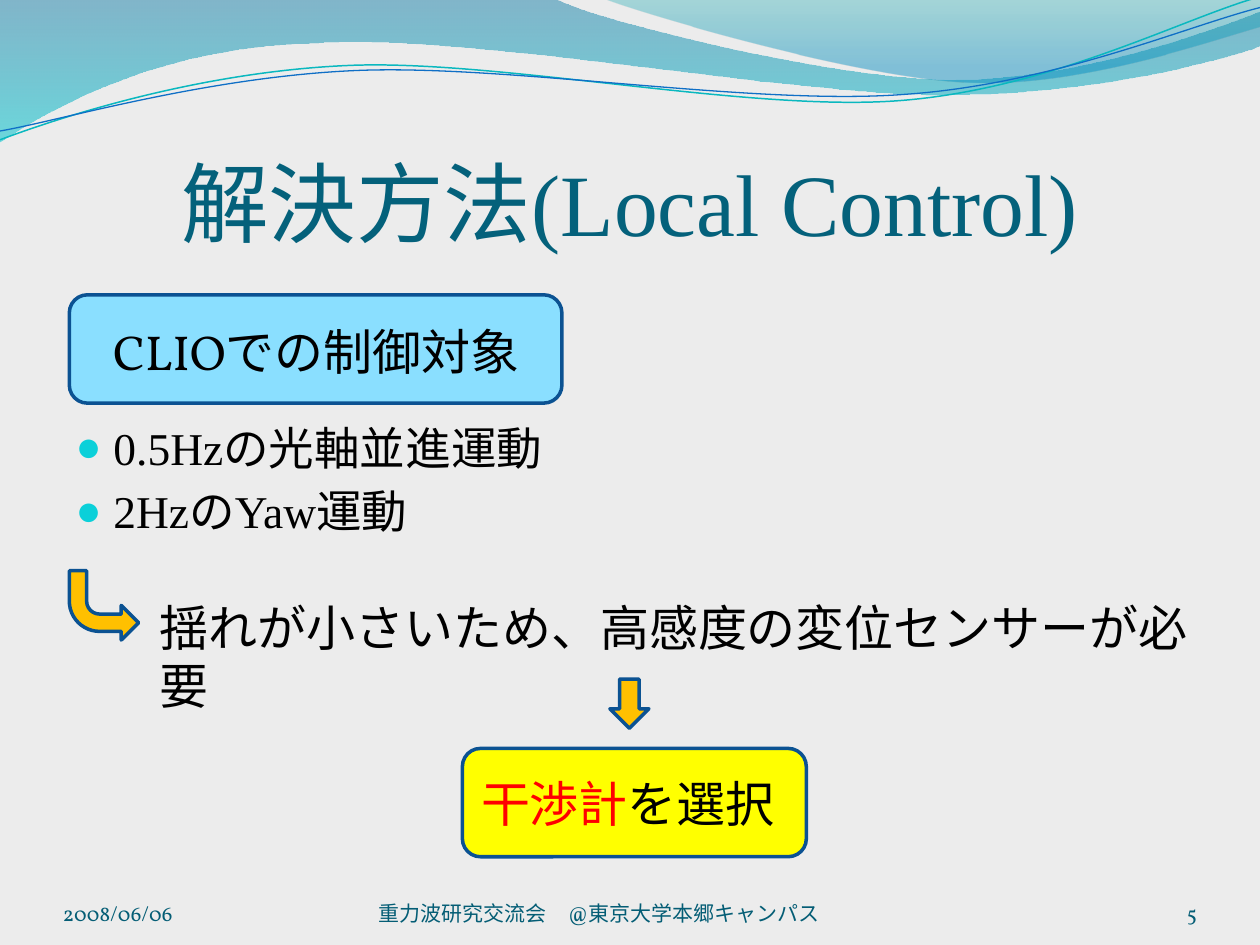
from pptx import Presentation
from pptx.dml.color import RGBColor
from pptx.enum.shapes import MSO_SHAPE
from pptx.enum.text import MSO_ANCHOR, MSO_AUTO_SIZE, PP_ALIGN
from pptx.oxml.ns import qn
from pptx.util import Inches, Pt
from lxml.etree import Element, SubElement

COLORS = {
    "bg": "ECECEC", "title": "04617B", "footer": "045D75", "text": "000000",
    "accent": "FF0000", "bullet": "0BD0D9", "outline": "0B5292",
    "arrow": "FFC000", "topic": "8ADFFF", "choice": "FFFF00",
    "teal_line": "0AB8BF", "blue_line": "0F6FC6",
    "band_top": "0074A1", "band_end": "00C6CF",
    "crest_top": "00A1A9", "crest_end": "008BBF",
}
SERIF, BODY = "Times New Roman", "Vollkorn"

TITLE = "解決方法(Local Control)"
BULLETS = [
    [("0.5Hz", SERIF), ("の光軸並進運動", BODY)],
    [("2Hz", SERIF), ("の", BODY), ("Yaw", SERIF), ("運動", BODY)],
]
# Each wave is a list of segments: 2 numbers end a straight line, 6 a Bezier curve.
# Gradient stops: position, colour, opacity in percent.
BANDS = [
    ([(0, 0), (4.4, -0.01), (4.76, 0.17, 6.64, 0.63, 7.58, 0.63),
      (8.53, 0.63, 9.58, 0.26, 10, 0.09), (10.01, 0.36),
      (9.83, 0.44, 8.7, 0.76, 7.46, 0.75), (6.22, 0.75, 3.82, 0.28, 2.57, 0.34),
      (1.29, 0.36, 0.46, 0.83, -0.01, 1.13), (0, 0)],
     [(0, "band_top", 45), (1, "band_end", 55)]),
    ([(4.79, -0.01), (5.09, 0.11, 6.82, 0.62, 7.69, 0.65),
      (8.56, 0.69, 9.61, 0.32, 10, 0.21), (10, 0), (4.79, -0.01)],
     [(0, "crest_top", 30), (0.8, "crest_end", 45)]),
]
WAVE_LINES = [
    ([(0, 1.11), (0.48, 0.93, 1.58, 0.57, 2.77, 0.52),
      (3.95, 0.47, 5.93, 0.89, 7.13, 0.8), (8.33, 0.71, 9.38, 0.15, 9.98, -0.02)],
     "teal_line", 0.85),
    ([(0, 1.04), (0.47, 0.96, 1.64, 0.61, 2.83, 0.56),
      (4.03, 0.51, 5.97, 0.84, 7.17, 0.75), (8.36, 0.67, 9.41, 0.21, 10, 0.06)],
     "blue_line", 0.75),
]
SHAPES = [
    (MSO_SHAPE.ROUNDED_RECTANGLE, (3.67, 5.94, 2.73, 0.86), "choice"),
    (MSO_SHAPE.DOWN_ARROW, (4.84, 5.39, 0.31, 0.39), "arrow"),
    (MSO_SHAPE.ROUNDED_RECTANGLE, (0.55, 2.34, 3.91, 0.86), "topic"),
    (MSO_SHAPE.BENT_ARROW, (0.55, 4.53, 0.55, 0.55), "arrow"),
]
LABELS = [
    ((0.8, 2.5, 3.57, 0.57), [("CLIOでの制御対象", "text")]),
    ((1.17, 4.69, 8.36, 0.57), [("揺れが小さいため、高感度の変位センサーが必要", "text")]),
    ((3.72, 6.09, 2.56, 0.57), [("干渉計", "accent"), ("を選択", "text")]),
]
FOOTERS = [
    ((0.5, 6.95, 2.33, 0.4), "2008/06/06", PP_ALIGN.LEFT),
    ((2.92, 6.95, 3.67, 0.4), "重力波研究交流会　@東京大学本郷キャンパス", PP_ALIGN.CENTER),
    ((8.67, 6.95, 0.83, 0.4), "5", PP_ALIGN.RIGHT),
]


def rgb(name):
    return RGBColor.from_string(COLORS[name])


def place(sp, box):
    sp.left, sp.top, sp.width, sp.height = map(Inches, box)


def add_run(p, text, size, font, color):
    r = p.add_run()
    r.text = text
    r.font.size, r.font.name = Pt(size), font
    r.font.color.rgb = rgb(color)


def set_insets(tf, top=0):
    tf.margin_left = tf.margin_right = tf.margin_bottom = 0
    tf.margin_top = Inches(top)


def add_wave(slide, segments, close):
    """Draw the segment ends as a freeform, then bend its 6-number segments."""
    start, *ends = [tuple(map(Inches, seg[-2:])) for seg in segments]
    builder = slide.shapes.build_freeform(*start, scale=1.0)
    builder.add_line_segments(ends, close=close)
    sp = builder.convert_to_shape()
    sp.shadow.inherit = False
    lines = list(sp._element.spPr.iter(qn("a:lnTo")))
    for line, seg in zip(lines, segments[1:]):
        if len(seg) == 6:
            line.tag = qn("a:cubicBezTo")
            for i in (0, 1):
                x, y = map(Inches, seg[2 * i:2 * i + 2])
                line.insert(i, Element(qn("a:pt"), x=str(x - sp.left), y=str(y - sp.top)))
    return sp


def add_band(slide, segments, stops):
    sp = add_wave(slide, segments, True)
    sp.line.fill.background()
    sp.fill.gradient()
    sp.fill.gradient_angle = 270
    for stop, (pos, color, _) in zip(sp.fill.gradient_stops, stops):
        stop.position = pos
        stop.color.rgb = rgb(color)
    for clr, (_, _, opacity) in zip(sp._element.spPr.iter(qn("a:srgbClr")), stops):
        SubElement(clr, qn("a:alpha"), val=str(opacity * 1000))


def add_bullet(p):
    pPr = p._p.get_or_add_pPr()
    pPr.set("marL", str(Inches(0.3)))
    pPr.set("indent", str(-Inches(0.3)))
    SubElement(SubElement(pPr, qn("a:spcBef")), qn("a:spcPct"), val="20000")
    SubElement(SubElement(pPr, qn("a:buClr")), qn("a:srgbClr"), val=COLORS["bullet"])
    SubElement(pPr, qn("a:buSzPct"), val="95000")
    SubElement(pPr, qn("a:buChar"), char="●")


def add_textbox(slide, box):
    tf = slide.shapes.add_textbox(*map(Inches, box)).text_frame
    tf.word_wrap = True
    return tf


def main():
    prs = Presentation()
    prs.slide_width, prs.slide_height = Inches(10), Inches(7.5)
    slide = prs.slides.add_slide(prs.slide_layouts[1])
    slide.background.fill.solid()
    slide.background.fill.fore_color.rgb = rgb("bg")

    for segments, stops in BANDS:
        add_band(slide, segments, stops)
    for segments, color, width in WAVE_LINES:
        sp = add_wave(slide, segments, False)
        sp.fill.background()
        sp.line.color.rgb, sp.line.width = rgb(color), Pt(width)

    title, body = slide.placeholders
    place(title, (0.5, 0.77, 9, 1.25))
    tf = title.text_frame
    tf.vertical_anchor, tf.auto_size = MSO_ANCHOR.BOTTOM, MSO_AUTO_SIZE.NONE
    set_insets(tf, top=0.05)
    tf.paragraphs[0].alignment = PP_ALIGN.CENTER
    add_run(tf.paragraphs[0], TITLE, 50, SERIF, "title")

    place(body, (0.5, 3.28, 4.19, 1.09))
    tf = body.text_frame
    tf.auto_size = MSO_AUTO_SIZE.NONE
    for i, runs in enumerate(BULLETS):
        p = tf.add_paragraph() if i else tf.paragraphs[0]
        add_bullet(p)
        for text, font in runs:
            add_run(p, text, 26, font, "text")

    for kind, box, color in SHAPES:
        sp = slide.shapes.add_shape(kind, *map(Inches, box))
        sp.shadow.inherit = False
        sp.fill.solid()
        sp.fill.fore_color.rgb = rgb(color)
        sp.line.color.rgb, sp.line.width = rgb("outline"), Pt(2)
        if kind == MSO_SHAPE.BENT_ARROW:
            sp._element.spPr.xfrm.set("flipV", "1")

    for box, runs in LABELS:
        tf = add_textbox(slide, box)
        tf.auto_size = MSO_AUTO_SIZE.SHAPE_TO_FIT_TEXT
        for text, color in runs:
            add_run(tf.paragraphs[0], text, 28, BODY, color)

    for box, text, align in FOOTERS:
        tf = add_textbox(slide, box)
        tf.vertical_anchor = MSO_ANCHOR.BOTTOM
        set_insets(tf)
        tf.paragraphs[0].alignment = align
        add_run(tf.paragraphs[0], text, 12, BODY, "footer")

    prs.save("out.pptx")


if __name__ == "__main__":
    main()
